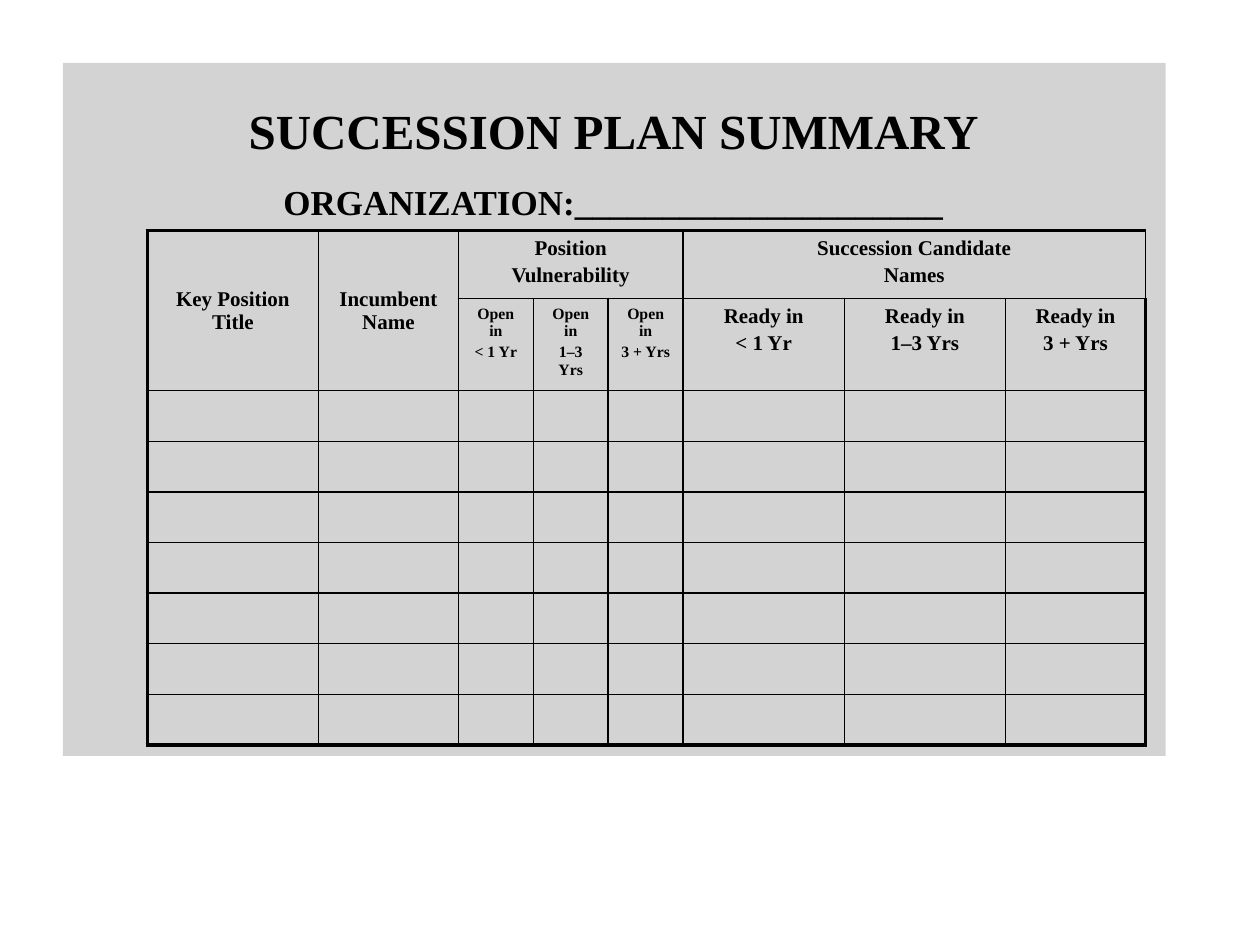
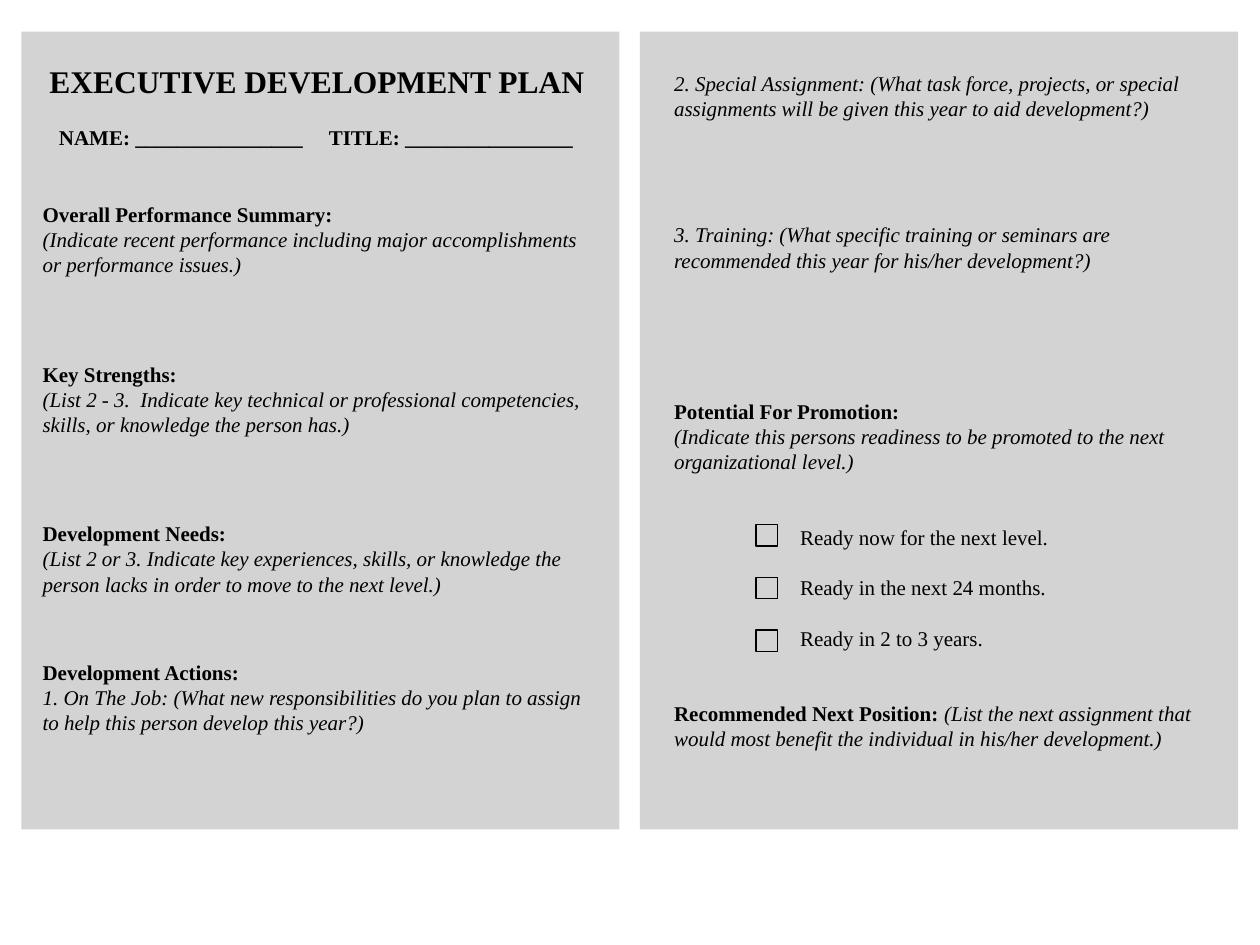
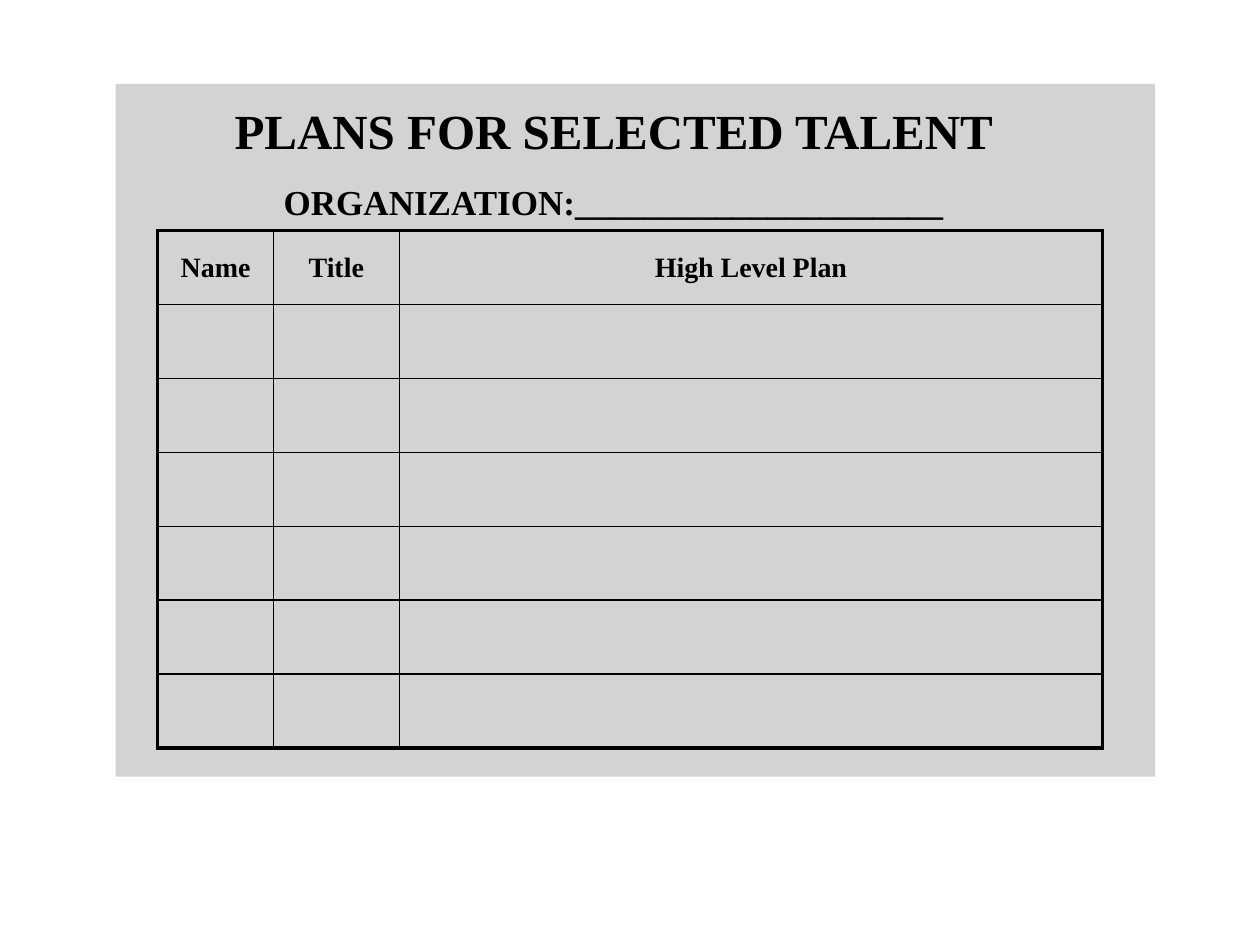
from dataclasses import dataclass

from lxml.etree import SubElement
from pptx import Presentation
from pptx.dml.color import RGBColor
from pptx.enum.shapes import MSO_SHAPE
from pptx.enum.text import MSO_ANCHOR, PP_ALIGN
from pptx.oxml import parse_xml
from pptx.oxml.ns import nsdecls, qn
from pptx.util import Cm, Pt


@dataclass(frozen=True)
class Theme:
    font: str = "Times New Roman"
    ink: str = "000000"
    panel: str = "D3D3D3"
    title: int = 28
    subtitle: int = 20
    form_title: int = 18
    plan_head: int = 16
    body: int = 12
    small: int = 9
    leading: float = 1.2
    cell_gap: float = 2.1
    rule: float = 1
    frame: float = 2.25
    check_line: float = 0.75


THEME = Theme()
STYLES = {
    "plain": {"bold": False, "italic": False},
    "heading": {"bold": True, "italic": False},
    "note": {"bold": False, "italic": True},
}


@dataclass(frozen=True)
class Box:
    """An area in centimetres."""
    left: float
    top: float
    width: float
    height: float

    def inside(self, dx, dy, width, height):
        return Box(self.left + dx, self.top + dy, width, height)

    def place(self):
        return [Cm(v) for v in (self.left, self.top, self.width, self.height)]


@dataclass(frozen=True)
class Line:
    """One paragraph; runs are (text, style) pairs."""
    runs: tuple
    size: int = THEME.body
    align: PP_ALIGN = PP_ALIGN.LEFT
    before: float = 0
    leading: float = THEME.leading
    indent: float = 0
    tabs: tuple = ()


# ---- Shared parts ----

def write(frame, lines):
    """Fill a text frame; a leading of 0 keeps the font's own line height."""
    for index, line in enumerate(lines):
        paragraph = frame.add_paragraph() if index else frame.paragraphs[0]
        props = paragraph._p.get_or_add_pPr()
        if line.tabs:
            stops = SubElement(props, qn("a:tabLst"))
            for stop in line.tabs:
                SubElement(stops, qn("a:tab"), pos=str(Cm(stop)), algn="l")
        if line.indent:
            props.set("marL", str(Cm(line.indent)))
        layout = {"alignment": line.align, "space_before": Pt(line.before)}
        if line.leading:
            layout["line_spacing"] = Pt(line.size * line.leading)
        for name, value in layout.items():
            setattr(paragraph, name, value)
        for words, style in line.runs:
            run = paragraph.add_run()
            run.text = words
            look = {"name": THEME.font, "size": Pt(line.size), **STYLES[style]}
            for name, value in look.items():
                setattr(run.font, name, value)
            run.font.color.rgb = RGBColor.from_string(THEME.ink)


def add_text(slide, box, lines):
    frame = slide.shapes.add_textbox(*box.place()).text_frame
    frame.word_wrap = True
    write(frame, lines)


def add_rectangle(slide, box, fill=None, line_width=0):
    rectangle = slide.shapes.add_shape(MSO_SHAPE.RECTANGLE, *box.place())
    rectangle.shadow.inherit = False
    if fill:
        rectangle.fill.solid()
        rectangle.fill.fore_color.rgb = RGBColor.from_string(fill)
    else:
        rectangle.fill.background()
    if line_width:
        rectangle.line.color.rgb = RGBColor.from_string(THEME.ink)
        rectangle.line.width = Pt(line_width)
    else:
        rectangle.line.fill.background()


def add_heading(slide, box, title):
    """Title of a summary sheet with its organization line."""
    add_text(slide, box, [
        Line(((title, "heading"),), THEME.title, PP_ALIGN.CENTER),
        Line((("ORGANIZATION:_____________________", "heading"),),
             THEME.subtitle, PP_ALIGN.CENTER, leading=1.5 * THEME.leading),
    ])


def add_grid(slide, box, columns, rows):
    """Unfilled table with a heavy frame and thin inner rules."""
    table = slide.shapes.add_table(len(rows), len(columns), *box.place()).table
    table.first_row = table.horz_banding = False
    for column, width in zip(table.columns, columns):
        column.width = Cm(width)
    for row, height in zip(table.rows, rows):
        row.height = Cm(height)
    for r in range(len(rows)):
        for c in range(len(columns)):
            cell = table.cell(r, c)
            cell.fill.background()
            on_frame = {"L": c == 0, "R": c == len(columns) - 1,
                        "T": r == 0, "B": r == len(rows) - 1}
            for index, (side, outer) in enumerate(on_frame.items()):
                width = Pt(THEME.frame if outer else THEME.rule)
                cell._tc.get_or_add_tcPr().insert(index, parse_xml(
                    f'<a:ln{side} {nsdecls("a")} w="{width}"><a:solidFill>'
                    f'<a:srgbClr val="{THEME.ink}"/></a:solidFill></a:ln{side}>'))
    return table


def fill_head(cell, texts, size=THEME.body, anchor=MSO_ANCHOR.TOP):
    cell.vertical_anchor = anchor
    write(cell.text_frame, [
        Line(((words, "heading"),), size, PP_ALIGN.CENTER,
             THEME.cell_gap if index else 0, leading=0)
        for index, words in enumerate(texts)])


# ---- Slide 1: succession summary ----

def succession_summary(slide, box):
    add_rectangle(slide, box, THEME.panel)
    add_heading(slide, box.inside(3.4, 0.64, 15.39, 2.74), "SUCCESSION PLAN SUMMARY")
    columns = [3.45, 2.82] + [1.51] * 3 + [3.25, 3.25, 2.82]
    rows = [1.37, 1.85] + [1.02] * 7
    grid = add_grid(slide, box.inside(1.7, 3.38, sum(columns), sum(rows)), columns, rows)

    # Headings over two rows
    for column, label in enumerate(("Key Position Title", "Incumbent Name")):
        grid.cell(0, column).merge(grid.cell(1, column))
        fill_head(grid.cell(0, column), [label], anchor=MSO_ANCHOR.MIDDLE)

    # Headings over three columns, each with its periods below
    groups = (
        (2, ("Position", "Vulnerability"), "Open in", THEME.small),
        (5, ("Succession Candidate", "Names"), "Ready in", THEME.body),
    )
    for first, label, prefix, size in groups:
        grid.cell(0, first).merge(grid.cell(0, first + 2))
        fill_head(grid.cell(0, first), label)
        for step, period in enumerate(("< 1 Yr", "1–3 Yrs", "3 + Yrs")):
            fill_head(grid.cell(1, first + step), (prefix, period), size)


# ---- Slide 2: development plan ----

def section(heading, notes, before=0):
    """A bold heading, if any, followed by lines in italics."""
    lines = [(heading, "heading")] if heading else []
    lines += [(note, "note") for note in notes]
    return [Line((run,), before=0 if index else before)
            for index, run in enumerate(lines)]


def performance_page(slide, box):
    add_rectangle(slide, box, THEME.panel)
    add_text(slide, box.inside(0.26, 0.48, 11.4, 2.06), [
        Line((("EXECUTIVE DEVELOPMENT PLAN", "heading"),),
             THEME.form_title, PP_ALIGN.CENTER),
        Line((("\tNAME: ________________\tTITLE: ________________", "heading"),),
             before=14.4, tabs=(0.25, 5.69)),
    ])
    add_text(slide, box.inside(0.18, 3.3, 11.6, 11.84), [
        *section("Overall Performance Summary:", (
            "(Indicate recent performance including major accomplishments",
            "or performance issues.)")),
        *section("Key Strengths:", (
            "(List 2 - 3.  Indicate key technical or professional competencies,",
            "skills, or knowledge the person has.)"), 48),
        *section("Development Needs:", (
            "(List 2 or 3. Indicate key experiences, skills, or knowledge the",
            "person lacks in order to move to the next level.)"), 48),
        *section("Development Actions:", (
            "1. On The Job: (What new responsibilities do you plan to assign",
            "to help this person develop this year?)"), 36),
    ])


def promotion_page(slide, box):
    add_rectangle(slide, box, THEME.panel)
    blank = THEME.body * THEME.leading
    levels = ("Ready now for the next level.", "Ready in the next 24 months.",
              "Ready in 2 to 3 years.")
    add_text(slide, box.inside(0.44, 0.66, 11.2, 13.94), [
        *section("", (
            "2. Special Assignment: (What task force, projects, or special",
            "assignments will be given this year to aid development?)")),
        *section("", (
            "3. Training: (What specific training or seminars are",
            "recommended this year for his/her development?)"), 4 * blank),
        *section("Potential For Promotion:", (
            "(Indicate this persons readiness to be promoted to the next",
            "organizational level.)"), 5 * blank),
        *[Line(((level, "plain"),), before=blank if index else 2 * blank, indent=2.54)
          for index, level in enumerate(levels)],
        Line((("Recommended Next Position:", "heading"),
              (" (List the next assignment that", "note")), before=2 * blank),
        *section("", ("would most benefit the individual in his/her development.)",)),
    ])
    # Check boxes beside the levels
    for index in range(len(levels)):
        add_rectangle(slide, box.inside(2.34, 9.94 + 1.06 * index, 0.43, 0.43),
                      line_width=THEME.check_line)


# ---- Slide 3: talent plans ----

def talent_plans(slide, box):
    add_rectangle(slide, box, THEME.panel)
    add_heading(slide, box.inside(1.81, 0.22, 16.46, 2.74), "PLANS FOR SELECTED TALENT")
    columns, rows = [2.33, 2.54, 14.18], [1.49] * 7
    grid = add_grid(slide, box.inside(0.85, 2.96, sum(columns), sum(rows)), columns, rows)
    for column, label in enumerate(("Name", "Title", "High Level Plan")):
        fill_head(grid.cell(0, column), [label], THEME.plan_head, MSO_ANCHOR.MIDDLE)


def main():
    deck = Presentation()
    deck.slide_width, deck.slide_height = Cm(25.4), Cm(19.05)
    pages = (
        ((succession_summary, Box(1.27, 1.27, 22.23, 13.97)),),
        ((performance_page, Box(0.43, 0.64, 12.06, 16.08)),
         (promotion_page, Box(12.9, 0.64, 12.06, 16.08))),
        ((talent_plans, Box(2.33, 1.69, 20.96, 13.97)),),
    )
    for regions in pages:
        slide = deck.slides.add_slide(deck.slide_layouts[6])
        for draw, box in regions:
            draw(slide, box)
    deck.save("out.pptx")


if __name__ == "__main__":
    main()
